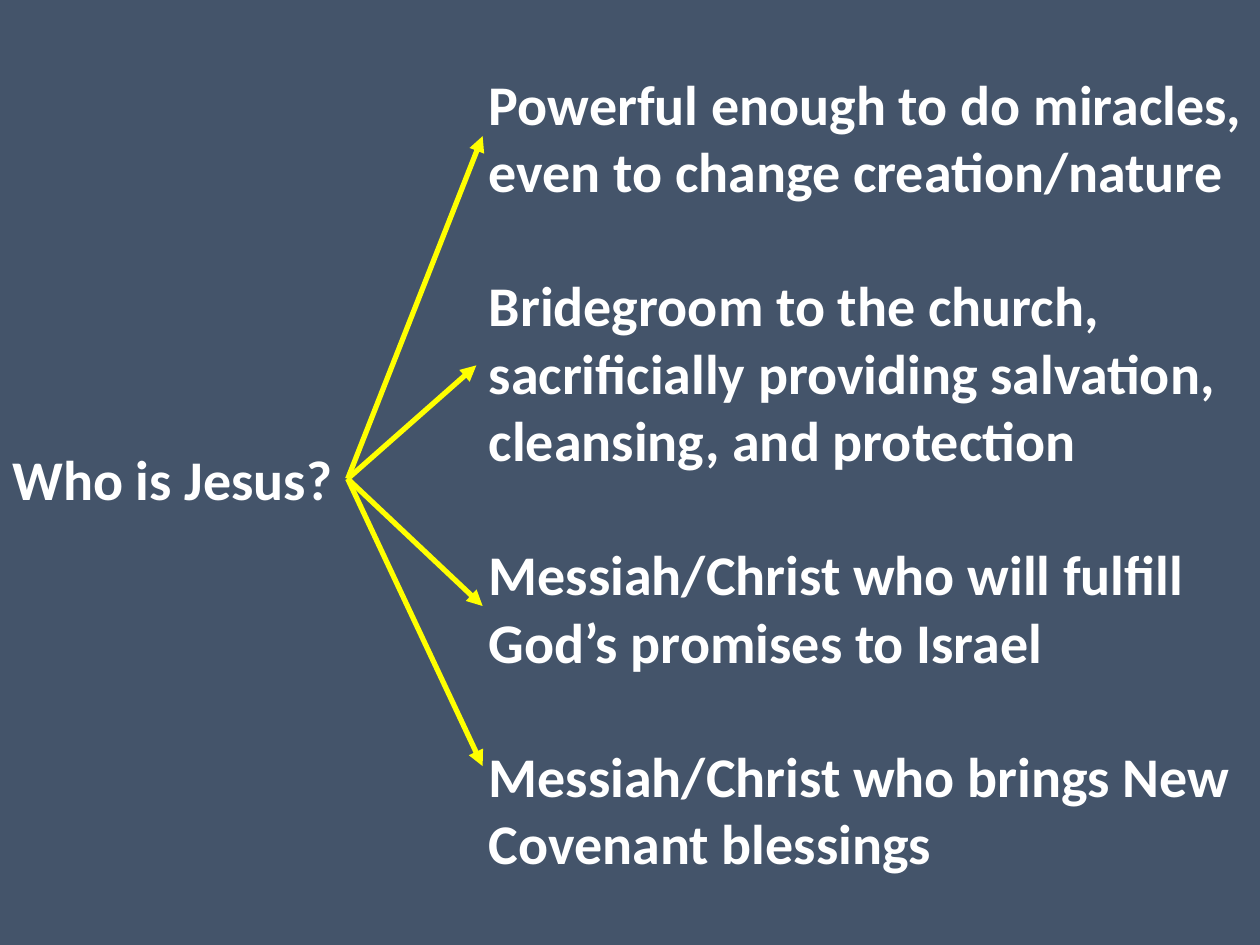
from lxml import etree
from pptx import Presentation
from pptx import util as u
from pptx.dml.color import RGBColor
from pptx.enum import shapes, text
from pptx.oxml import ns

QUESTION = "Who is Jesus?"
ANSWERS = [
    "Powerful enough to do miracles, even to change creation/nature",
    "Bridegroom to the church, sacrificially providing salvation, cleansing, and protection",
    "Messiah/Christ who will fulfill God’s promises to Israel",
    "Messiah/Christ who brings New Covenant blessings",
]
ARROW_TIPS = [(275.8, 77.8), (272.2, 208.8), (275.8, 346.3), (275.8, 437.8)]


def color(hex_string):
    """Return the colour for a hex string."""
    return RGBColor.from_string(hex_string)


def add_text(slide, left, top, width, height, lines, wrap, gap=0):
    """Add bold white paragraphs separated by a gap and return the box."""
    box = slide.shapes.add_textbox(u.Pt(left), u.Pt(top), u.Pt(width), u.Pt(height))
    frame = box.text_frame
    frame.word_wrap = wrap
    frame.auto_size = text.MSO_AUTO_SIZE.SHAPE_TO_FIT_TEXT
    frame.text = "\n".join(lines)
    for index, paragraph in enumerate(frame.paragraphs):
        paragraph.space_before = u.Pt(gap if index else 0)
        font = paragraph.runs[0].font
        font.name = "Calibri"
        font.size = u.Pt(32)
        font.bold = True
        font.color.rgb = color("FFFFFF")
    return box


def add_arrow(slide, source, tip_x, tip_y):
    """Add a yellow arrow from the right side of the source box to a tip."""
    arrow = slide.shapes.add_connector(
        shapes.MSO_CONNECTOR.STRAIGHT, 0, 0, u.Pt(tip_x), u.Pt(tip_y))
    arrow.begin_connect(source, 3)
    arrow.line.color.rgb = color("FFFF00")
    arrow.line.width = u.Pt(3)
    line = arrow.line._get_or_add_ln()
    etree.SubElement(line, ns.qn("a:tailEnd"), type="triangle")
    etree.SubElement(arrow._element.spPr, ns.qn("a:effectLst"))


def main():
    """Build the slide and save it."""
    presentation = Presentation()
    presentation.slide_width = u.Pt(720)
    presentation.slide_height = u.Pt(540)
    slide = presentation.slides.add_slide(presentation.slide_layouts[6])
    slide.background.fill.solid()
    slide.background.fill.fore_color.rgb = color("44546A")

    question = add_text(slide, 0, 250.6, 198.7, 46, [QUESTION], wrap=False)
    add_text(slide, 272.2, 36, 447.8, 472.3, ANSWERS, wrap=True, gap=38.5)
    for tip_x, tip_y in ARROW_TIPS:
        add_arrow(slide, question, tip_x, tip_y)

    presentation.save("out.pptx")


if __name__ == "__main__":
    main()
